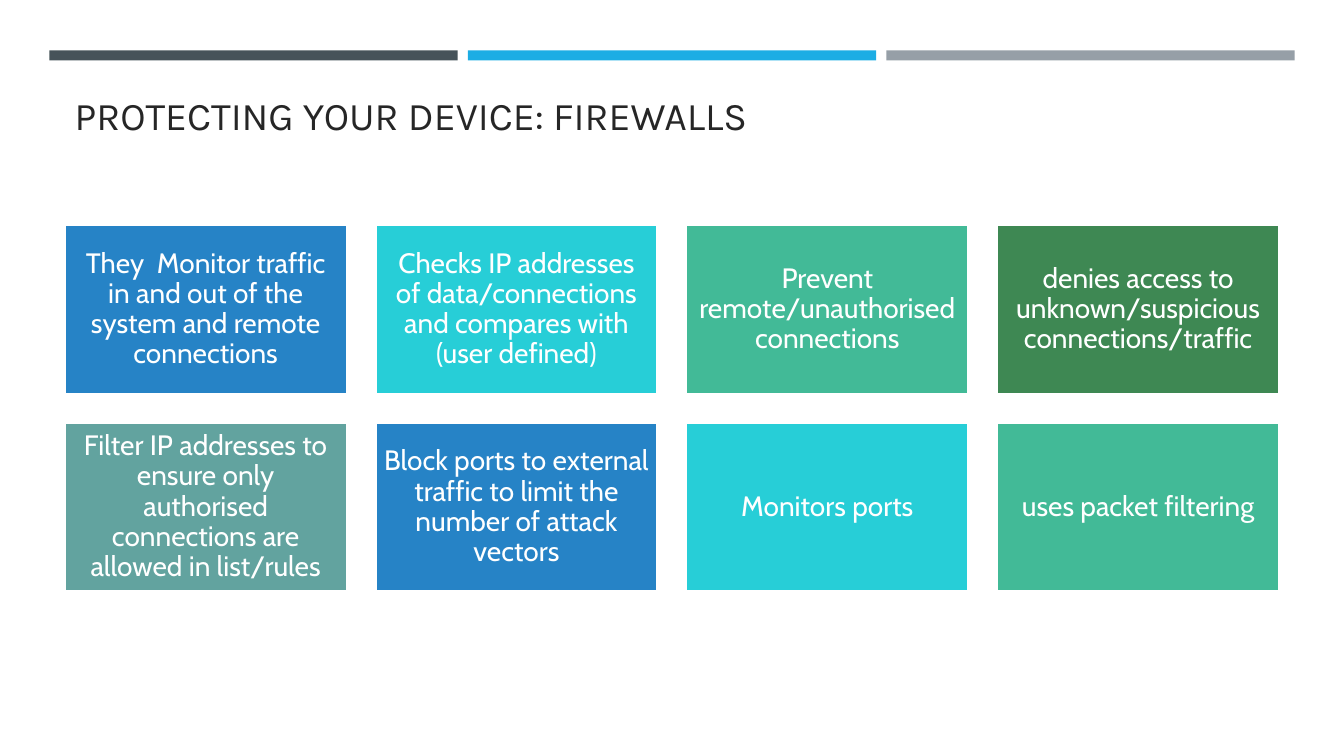
import pptx
import pptx.util
import pptx.dml.color
import pptx.enum.shapes
import pptx.enum.text

Inches = pptx.util.Inches
Pt = pptx.util.Pt
ALIGN = pptx.enum.text.PP_ALIGN
ANCHOR = pptx.enum.text.MSO_ANCHOR

BARS = ["465359", "1CADE4", "969FA7"]
CARDS = [
    ("They  Monitor traffic in and out of the system and remote connections", "2683C6"),
    ("Checks IP addresses of data/connections and compares with (user defined)", "27CED7"),
    ("Prevent remote/unauthorised connections", "42BA97"),
    ("denies access to unknown/suspicious connections/traffic", "3E8853"),
    ("Filter IP addresses to ensure only authorised connections are allowed in list/rules", "62A39F"),
    ("Block ports to external traffic to limit the number of attack vectors", "2683C6"),
    ("Monitors ports", "27CED7"),
    ("uses packet filtering", "42BA97"),
]


def color(code):
    return pptx.dml.color.RGBColor.from_string(code)


def write(shape, text, size=20, font="Cabin", ink="FFFFFF", align=ALIGN.CENTER,
          anchor=ANCHOR.MIDDLE, inset=0.08, space=0.9):
    frame = shape.text_frame
    frame.word_wrap = True
    frame.auto_size = pptx.enum.text.MSO_AUTO_SIZE.NONE
    frame.vertical_anchor = anchor
    frame.margin_left = frame.margin_right = Inches(inset)
    frame.margin_top = frame.margin_bottom = Inches(min(inset, 0.08))
    para = frame.paragraphs[0]
    para.alignment = align
    para.line_spacing = space
    run = para.add_run()
    run.text = text
    run.font.size = Pt(size)
    run.font.name = font
    run.font.color.rgb = color(ink)


def add_rect(slide, left, top, width, height, fill, line=None):
    rect = slide.shapes.add_shape(
        pptx.enum.shapes.MSO_SHAPE.RECTANGLE,
        Inches(left), Inches(top), Inches(width), Inches(height))
    rect.shadow.inherit = False
    rect.fill.solid()
    rect.fill.fore_color.rgb = color(fill)
    if line:
        rect.line.color.rgb = color(line)
        rect.line.width = Pt(1.75)
    else:
        rect.line.fill.background()
    return rect


def add_title(slide, text):
    title = slide.shapes.title
    title.left, title.top = Inches(0.64), Inches(0.77)
    title.width, title.height = Inches(12.06), Inches(0.69)
    write(title, text, size=28, font="Karla", ink="262626",
          align=ALIGN.LEFT, anchor=ANCHOR.BOTTOM, inset=0.1)


def main():
    deck = pptx.Presentation()
    deck.slide_width, deck.slide_height = Inches(13.33), Inches(7.5)
    slide = deck.slides.add_slide(deck.slide_layouts[5])

    # Bars along the top
    for col, fill in enumerate(BARS):
        add_rect(slide, 0.49 + 4.15 * col, 0.5, 4.05, 0.1, fill)

    add_title(slide, "PROTECTING YOUR DEVICE: FIREWALLS")

    # Cards in two rows of four
    for index, (text, fill) in enumerate(CARDS):
        row, col = divmod(index, 4)
        card = add_rect(slide, 0.64 + 3.083 * col, 2.23 + 1.96 * row,
                        2.8, 1.68, fill, line="FFFFFF")
        write(card, text)

    deck.save("out.pptx")


if __name__ == "__main__":
    main()
